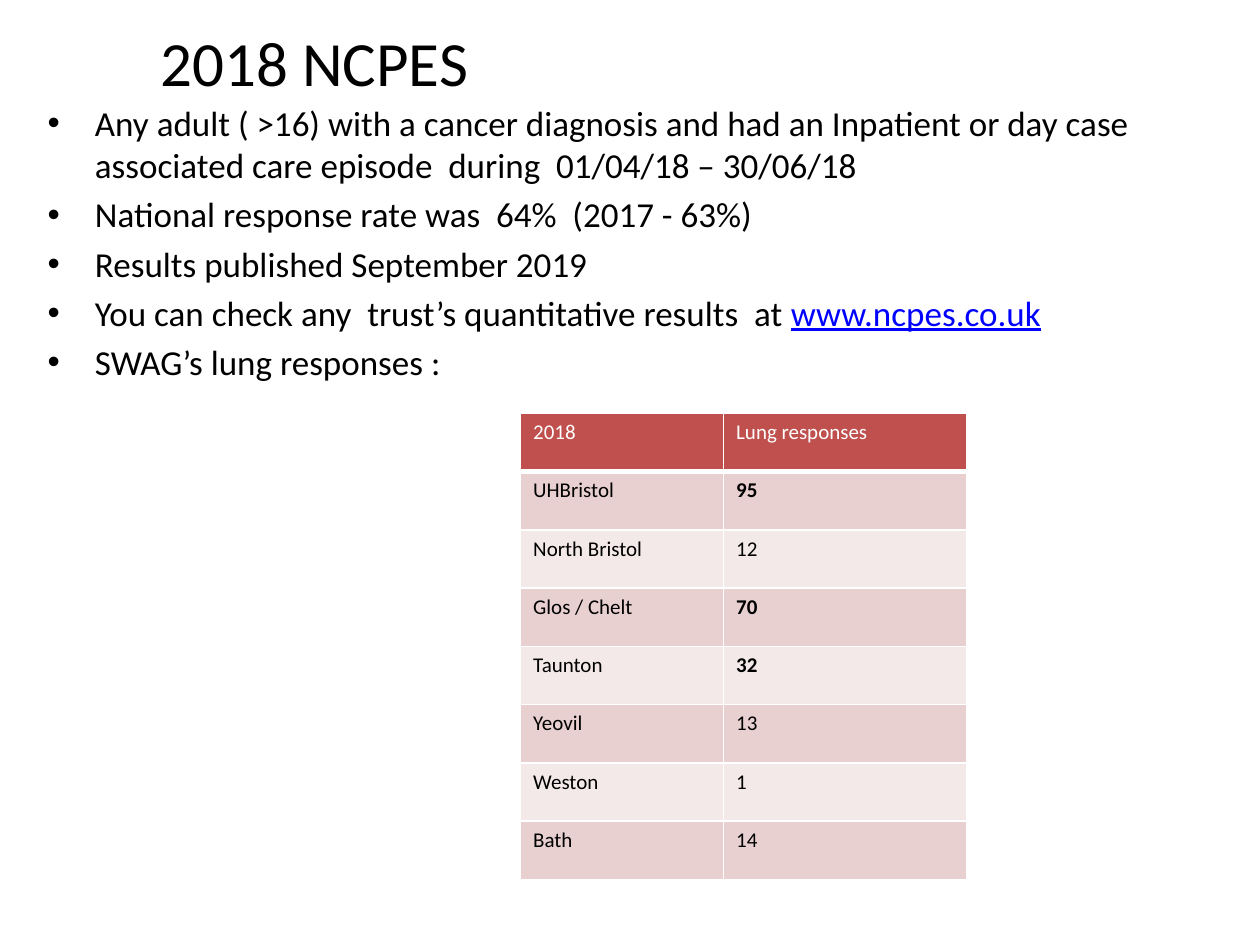
from lxml import etree
from pptx import Presentation
from pptx.dml.color import RGBColor
from pptx.enum.text import MSO_ANCHOR, PP_ALIGN
from pptx.oxml.ns import qn
from pptx.util import Pt

CENTER, MIDDLE = PP_ALIGN.CENTER, MSO_ANCHOR.MIDDLE
BLACK, WHITE, BLUE = "000000", "FFFFFF", "0000FF"
HEADER_RED, DARK_BAND, LIGHT_BAND = "C0504D", "E8D0D0", "F4E9E9"


def add_span(para, text, size=20, color=BLACK, bold=False, underline=False):
    span = para.add_run()
    span.text = text
    span.font.name = "Calibri"
    span.font.size = Pt(size)
    span.font.bold = bold
    span.font.underline = underline
    span.font.color.rgb = RGBColor.from_string(color)


def add_border(cell, side, width):
    line = etree.SubElement(cell._tc.get_or_add_tcPr(), qn(f"a:ln{side}"), w=str(Pt(width)))
    fill = etree.SubElement(line, qn("a:solidFill"))
    etree.SubElement(fill, qn("a:srgbClr"), val=WHITE)


deck = Presentation()
deck.slide_width, deck.slide_height = Pt(720), Pt(540)
page = deck.slides.add_slide(deck.slide_layouts[6])

# Title
title = page.shapes.add_textbox(Pt(48.24), Pt(9.36), Pt(262.8), Pt(51.12)).text_frame
title.word_wrap = True
title.vertical_anchor = MIDDLE
title.paragraphs[0].alignment = CENTER
add_span(title.paragraphs[0], "2018 NCPES", size=36)

# Bullet list: each item is plain text and an optional web address
items = [
    ("Any adult ( >16) with a cancer diagnosis and had an Inpatient or day case "
     "associated care episode  during  01/04/18 – 30/06/18", ""),
    ("National response rate was  64%  (2017 - 63%)", ""),
    ("Results published September 2019", ""),
    ("You can check any  trust’s quantitative results  at ", "www.ncpes.co.uk"),
    ("SWAG’s lung responses :", ""),
]
body = page.shapes.add_textbox(Pt(20.16), Pt(54.72), Pt(680.4), Pt(475.92)).text_frame
body.word_wrap = True
for index, (text, address) in enumerate(items):
    para = body.add_paragraph() if index else body.paragraphs[0]
    para.space_before = Pt(4 if index else 0)
    props = para._p.get_or_add_pPr()
    props.set("marL", str(Pt(27)))
    props.set("indent", str(-Pt(27)))
    etree.SubElement(props, qn("a:buFont"), typeface="Arial")
    etree.SubElement(props, qn("a:buChar"), char="•")
    add_span(para, text)
    if address:
        add_span(para, address, color=BLUE, underline=True)

# Response table, with the larger counts in bold
rows = [
    ("2018", "Lung responses"),
    ("UHBristol", "95"),
    ("North Bristol", "12"),
    ("Glos / Chelt", "70"),
    ("Taunton", "32"),
    ("Yeovil", "13"),
    ("Weston", "1"),
    ("Bath", "14"),
]
bold_counts = {"95", "70", "32"}
table = page.shapes.add_table(len(rows), 2, Pt(297.5), Pt(236.2), Pt(255), Pt(266.4)).table
table.columns[0].width, table.columns[1].width = Pt(116), Pt(139)
for row, texts in enumerate(rows):
    table.rows[row].height = Pt(33.3)
    band = DARK_BAND if row % 2 else LIGHT_BAND
    for column, text in enumerate(texts):
        cell = table.cell(row, column)
        for side in "LRTB":
            add_border(cell, side, 3 if row == 0 and side == "B" else 1)
        cell.fill.solid()
        cell.fill.fore_color.rgb = RGBColor.from_string(band if row else HEADER_RED)
        add_span(cell.text_frame.paragraphs[0], text, size=12,
                 color=BLACK if row else WHITE, bold=text in bold_counts)

deck.save("out.pptx")
